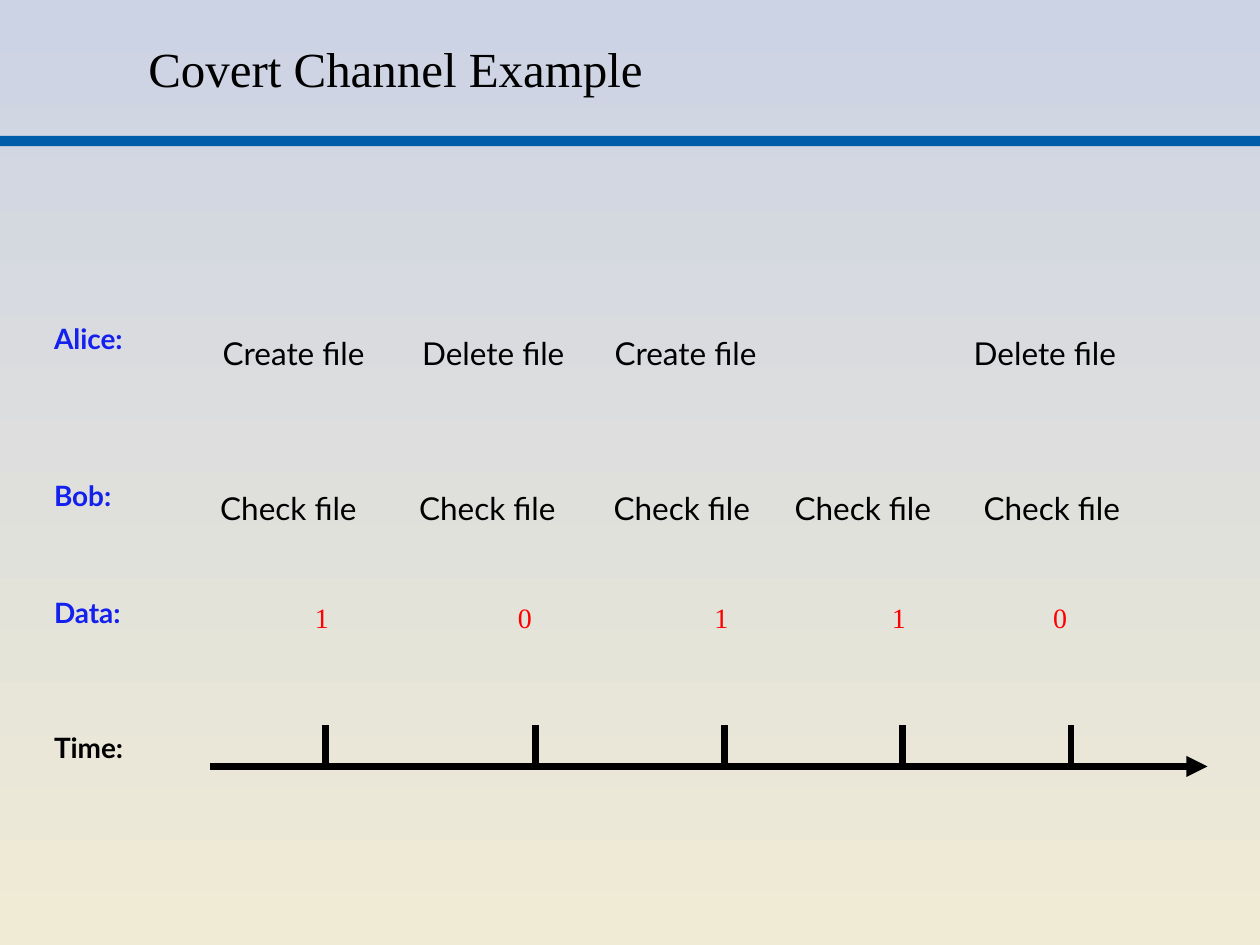
from dataclasses import dataclass

import lxml.etree
import pptx
import pptx.dml.color
import pptx.enum.shapes
import pptx.enum.text
import pptx.oxml.ns
import pptx.shapes.connector
import pptx.slide
import pptx.util
from pptx.util import Cm

RGBColor = pptx.dml.color.RGBColor
Anchor = pptx.enum.text.MSO_ANCHOR

BLACK = RGBColor(0x00, 0x00, 0x00)
BLUE = RGBColor(0x13, 0x20, 0xEE)
RED = RGBColor(0xFF, 0x00, 0x00)
RULE_BLUE = RGBColor(0x00, 0x5D, 0xAA)
SKY = RGBColor(0xCC, 0xD3, 0xE4)
SAND = RGBColor(0xF0, 0xEB, 0xD5)

SANS = "Lato"
SERIF = "Times New Roman"

SLIDE_WIDTH = 25.4
LABEL_LEFT = 0.84
ALICE_TOP = 6.6
BOB_TOP = 9.73
DATA_TOP = 11.99
TICK_TOP = 14.61
AXIS_TOP = 15.45


@dataclass(frozen=True)
class RowLabel:
    text: str
    top: float
    color: RGBColor


@dataclass(frozen=True)
class TimeSlot:
    tick: float
    bit: str
    bit_left: float
    check_left: float
    action: str = ""
    action_left: float = 0


ROW_LABELS = (
    RowLabel("Alice:", 6.35, BLUE),
    RowLabel("Bob:", 9.53, BLUE),
    RowLabel("Data:", 11.89, BLUE),
    RowLabel("Time:", 14.61, BLACK),
)

TIME_SLOTS = (
    TimeSlot(6.56, "1", 6.1, 4.19, "Create file", 4.24),
    TimeSlot(10.8, "0", 10.19, 8.2, "Delete file", 8.26),
    TimeSlot(14.61, "1", 14.15, 12.12, "Create file", 12.14),
    TimeSlot(18.2, "1", 17.73, 15.77),
    TimeSlot(21.59, "0", 20.98, 19.58, "Delete file", 19.38),
)


def add_text(slide: pptx.slide.Slide, text: str, *, left: float, top: float,
             width: float, height: float, size: float, font: str = SANS,
             color: RGBColor = BLACK, bold: bool = False,
             anchor: Anchor = Anchor.TOP) -> None:
    box = slide.shapes.add_textbox(Cm(left), Cm(top), Cm(width), Cm(height))
    frame = box.text_frame
    frame.word_wrap = True
    frame.vertical_anchor = anchor
    run = frame.paragraphs[0].add_run()
    run.text = text
    run.font.name = font
    run.font.size = pptx.util.Pt(size)
    run.font.bold = bold
    run.font.color.rgb = color


def add_line(slide: pptx.slide.Slide, start: tuple[float, float],
             end: tuple[float, float]) -> pptx.shapes.connector.Connector:
    line = slide.shapes.add_connector(
        pptx.enum.shapes.MSO_CONNECTOR.STRAIGHT,
        *(Cm(value) for value in (*start, *end)))
    line.line.color.rgb = BLACK
    line.line.width = pptx.util.Pt(4)
    lxml.etree.SubElement(line._element.spPr, pptx.oxml.ns.qn("a:effectLst"))
    return line


def add_backdrop(slide: pptx.slide.Slide) -> None:
    fill = slide.background.fill
    fill.gradient()
    fill.gradient_angle = 270
    for stop, color in zip(fill.gradient_stops, (SKY, SAND)):
        stop.color.rgb = color
    rule = slide.shapes.add_shape(
        pptx.enum.shapes.MSO_SHAPE.RECTANGLE,
        Cm(0), Cm(2.74), Cm(SLIDE_WIDTH), Cm(0.21))
    rule.shadow.inherit = False
    rule.fill.solid()
    rule.fill.fore_color.rgb = RULE_BLUE
    rule.line.fill.background()


def add_time_axis(slide: pptx.slide.Slide) -> None:
    axis = add_line(slide, (4.24, AXIS_TOP), (24.34, AXIS_TOP))
    arrowhead = lxml.etree.SubElement(
        axis.line._get_or_add_ln(), pptx.oxml.ns.qn("a:tailEnd"))
    arrowhead.set("type", "triangle")


def add_time_slot(slide: pptx.slide.Slide, slot: TimeSlot) -> None:
    add_line(slide, (slot.tick, AXIS_TOP), (slot.tick, TICK_TOP))
    if slot.action:
        add_text(slide, slot.action, left=slot.action_left, top=ALICE_TOP,
                 width=3.73, height=1.14, size=18)
    add_text(slide, "Check file", left=slot.check_left, top=BOB_TOP,
             width=3.48, height=1.14, size=18)
    add_text(slide, slot.bit, left=slot.bit_left, top=DATA_TOP,
             width=0.99, height=1.27, size=16, font=SERIF, color=RED)


def main() -> None:
    deck = pptx.Presentation()
    deck.slide_width = Cm(SLIDE_WIDTH)
    deck.slide_height = Cm(19.05)
    slide = deck.slides.add_slide(deck.slide_layouts[6])
    add_backdrop(slide)
    add_text(slide, "Covert Channel Example", left=2.74, top=0.2, width=20.75,
             height=2.34, size=28, font=SERIF, anchor=Anchor.MIDDLE)
    for label in ROW_LABELS:
        add_text(slide, label.text, left=LABEL_LEFT, top=label.top, width=2.87,
                 height=1.45, size=16, color=label.color, bold=True)
    add_time_axis(slide)
    for slot in TIME_SLOTS:
        add_time_slot(slide, slot)
    deck.save("out.pptx")


if __name__ == "__main__":
    main()
